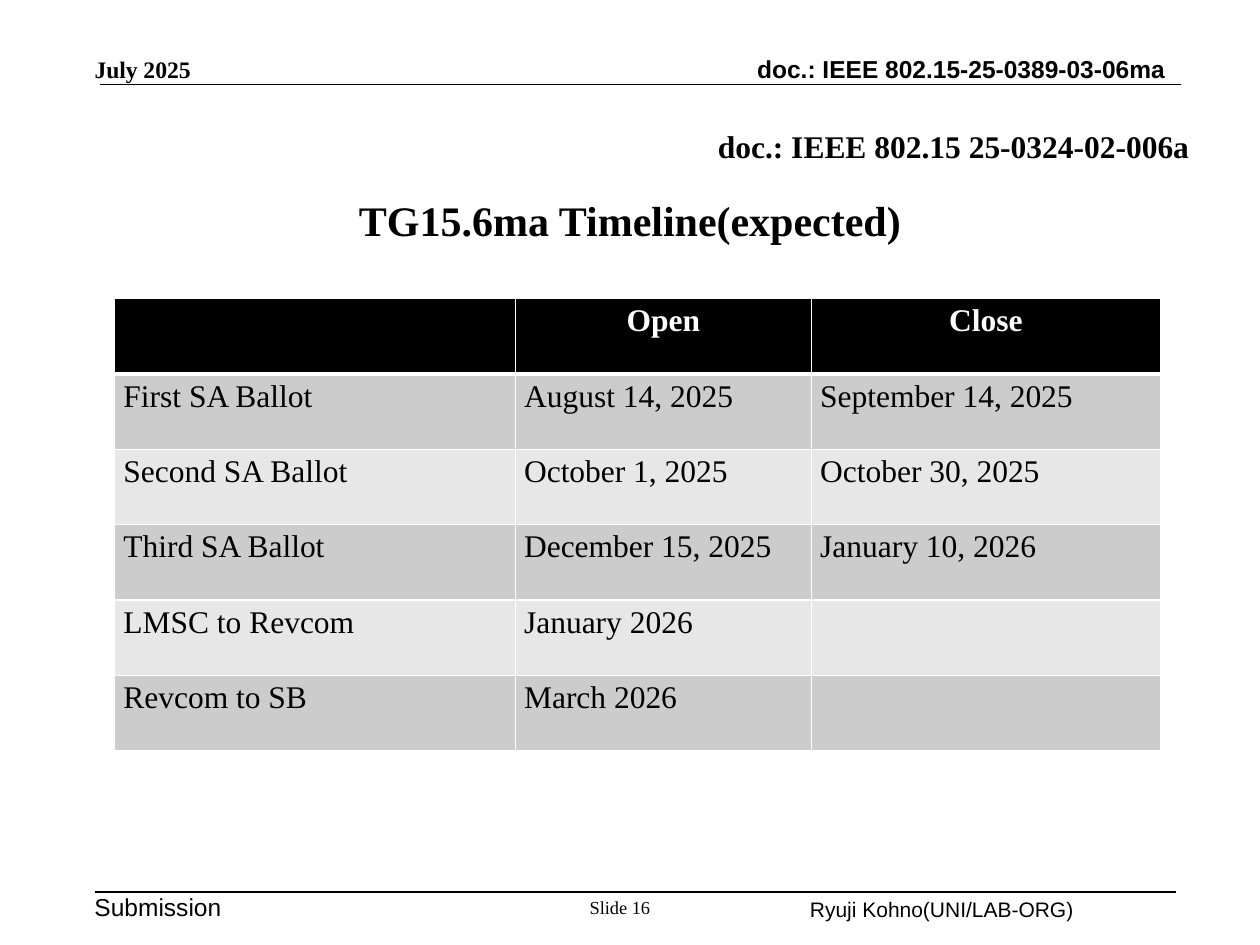
import pptx
import pptx.util
import pptx.dml.color
import pptx.enum.shapes
import pptx.enum.text
import pptx.oxml.ns
from lxml import etree

Inches = pptx.util.Inches
Pt = pptx.util.Pt
RGBColor = pptx.dml.color.RGBColor
Align = pptx.enum.text.PP_ALIGN
Anchor = pptx.enum.text.MSO_ANCHOR
qn = pptx.oxml.ns.qn

BLACK = RGBColor(0x00, 0x00, 0x00)
WHITE = RGBColor(0xFF, 0xFF, 0xFF)
DARK_BAND = RGBColor(0xCC, 0xCC, 0xCC)
LIGHT_BAND = RGBColor(0xE7, 0xE7, 0xE7)
SERIF = "Times New Roman"
SANS = "Arial"

COLUMN_WIDTHS = [3.18, 2.35, 2.77]
TIMELINE = [
    ["", "Open", "Close"],
    ["First SA Ballot", "August 14, 2025", "September 14, 2025"],
    ["Second SA Ballot", "October 1, 2025", "October 30, 2025"],
    ["Third SA Ballot", "December 15, 2025", "January 10, 2026"],
    ["LMSC to Revcom", "January 2026", ""],
    ["Revcom to SB", "March 2026", ""],
]


def write(para, text, size, font, color=BLACK, bold=False, align=Align.LEFT):
    para.alignment = align
    span = para.add_run()
    span.text = text
    span.font.size = Pt(size)
    span.font.name = font
    span.font.bold = bold
    span.font.color.rgb = color


def add_label(page, box, text, size, font, bold=False, align=Align.LEFT,
              anchor=Anchor.TOP, insets=(0, 0)):
    frame = page.shapes.add_textbox(*map(Inches, box)).text_frame
    frame.word_wrap = True
    frame.vertical_anchor = anchor
    frame.margin_left = frame.margin_right = Inches(insets[0])
    frame.margin_top = frame.margin_bottom = Inches(insets[1])
    write(frame.paragraphs[0], text, size, font, bold=bold, align=align)


def add_rule(page, left, top, width):
    rule = page.shapes.add_connector(
        pptx.enum.shapes.MSO_CONNECTOR.STRAIGHT,
        Inches(left), Inches(top), Inches(left + width), Inches(top))
    rule.line.color.rgb = BLACK
    rule.line.width = Pt(1)
    etree.SubElement(rule.element.spPr, qn("a:effectLst"))


def add_header(page, left, top, width):
    add_label(page, (left + 4.17, top, width - 4.17, 0.24),
              "doc.: IEEE 802.15-25-0389-03-06ma", 14, SANS, True,
              Align.RIGHT, Anchor.BOTTOM)
    add_label(page, (left, top + 0.02, 2.05, 0.22), "July 2025",
              13.5, SERIF, True, anchor=Anchor.BOTTOM)
    add_rule(page, left + 0.04, top + 0.25, 8.58)


def add_heading(page, left, top, width):
    add_label(page, (left + 3.59, top, 5.1, 0.3),
              "doc.: IEEE 802.15 25-0324-02-006a", 18, SERIF, True,
              Align.RIGHT, Anchor.BOTTOM)
    add_label(page, (left, top + 0.3, width, 0.87),
              "TG15.6ma Timeline(expected)", 24, SERIF, True,
              Align.CENTER, Anchor.MIDDLE, (0.08, 0.04))


def add_footer(page, left, top):
    add_rule(page, left, top, 8.58)
    add_label(page, (left, top, 1.16, 0.24), "Submission", 14, SANS)
    add_label(page, (left + 3.88, top + 0.03, 0.58, 0.3), "Slide 16",
              10.5, SERIF, align=Align.CENTER)
    add_label(page, (left + 5.58, top - 0.01, 2.79, 0.3),
              "Ryuji Kohno(UNI/LAB-ORG)", 12, SANS, insets=(0.1, 0.05))


def set_borders(cell, widths):
    properties = cell._tc.get_or_add_tcPr()
    for index, (side, width) in enumerate(widths.items()):
        line = etree.Element(qn("a:ln" + side), w=str(Pt(width)))
        fill = etree.SubElement(line, qn("a:solidFill"))
        etree.SubElement(fill, qn("a:srgbClr"), val=str(WHITE))
        properties.insert(index, line)


def style_cell(cell, text, row):
    is_header = row == 0
    cell.fill.solid()
    cell.fill.fore_color.rgb = (
        BLACK if is_header else DARK_BAND if row % 2 else LIGHT_BAND)
    cell.margin_left = cell.margin_right = Inches(0.07)
    cell.margin_top = cell.margin_bottom = Inches(0.04)
    set_borders(cell, {"L": 0.96, "R": 0.96,
                       "T": 3 if row == 1 else 0.96,
                       "B": 3 if is_header else 0.96})
    if text:
        write(cell.text_frame.paragraphs[0], text, 18, SERIF,
              WHITE if is_header else BLACK, is_header,
              Align.CENTER if is_header else Align.LEFT)


def add_timeline(page, left, top, width, height):
    table = page.shapes.add_table(
        len(TIMELINE), len(COLUMN_WIDTHS), Inches(left), Inches(top),
        Inches(width), Inches(height)).table
    for column, column_width in zip(table.columns, COLUMN_WIDTHS):
        column.width = Inches(column_width)
    for row, texts in enumerate(TIMELINE):
        for column, text in enumerate(texts):
            style_cell(table.cell(row, column), text, row)


def main():
    deck = pptx.Presentation()
    deck.slide_width = Inches(10)
    deck.slide_height = Inches(7.5)
    page = deck.slides.add_slide(deck.slide_layouts[6])
    add_header(page, 0.75, 0.42, 8.5)
    add_heading(page, 0.75, 1.01, 8.5)
    add_timeline(page, 0.91, 2.37, 8.3, 3.59)
    add_footer(page, 0.75, 7.08)
    deck.save("out.pptx")


if __name__ == "__main__":
    main()
